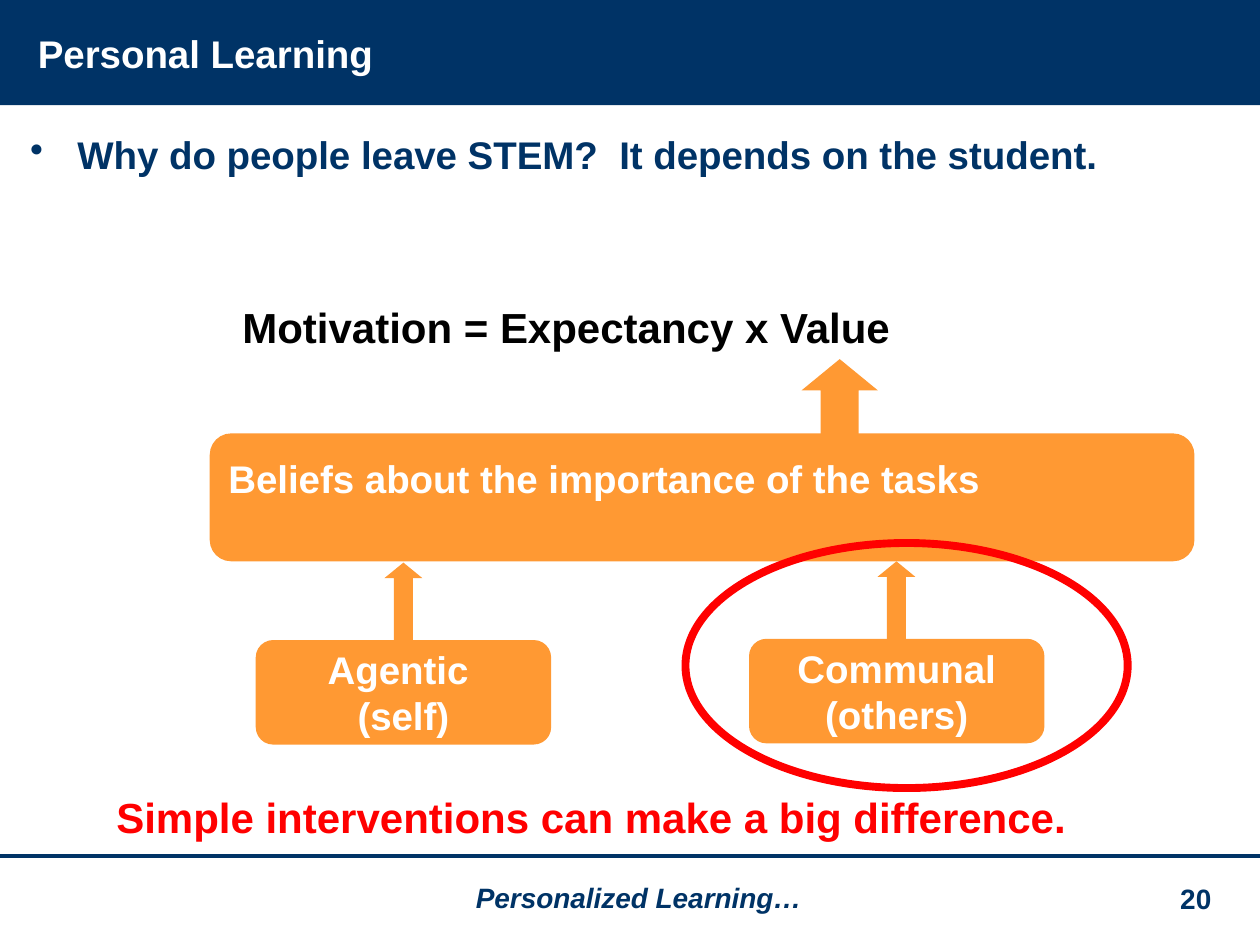
import pptx
import pptx.dml.color
import pptx.enum.shapes
import pptx.enum.text
import pptx.util
from lxml import etree

Kind = pptx.enum.shapes.MSO_SHAPE
Align = pptx.enum.text.PP_ALIGN
Anchor = pptx.enum.text.MSO_ANCHOR

NAVY, ORANGE, RED, WHITE, BLACK = "003366", "FF9933", "FF0000", "FFFFFF", "000000"
DRAWING = "http://schemas.openxmlformats.org/drawingml/2006/main"

presentation = pptx.Presentation()
presentation.slide_width = pptx.util.Inches(10)
presentation.slide_height = pptx.util.Inches(7.5)
slide = presentation.slides.add_slide(presentation.slide_layouts[5])

# The slide is a grid of 100 columns by 75 rows of square cells.
CELL = presentation.slide_width / 100


def paint(color_format, color):
    color_format.rgb = pptx.dml.color.RGBColor.from_string(color)


def write(shape, lines, size, color, align=Align.LEFT, anchor=Anchor.TOP, italic=False, bullet=None):
    """Fill a shape with bold paragraphs, one for each line."""
    frame = shape.text_frame
    frame.word_wrap = True
    frame.vertical_anchor = anchor
    frame.text = "\n".join(lines)
    font_format = {"name": "Arial", "size": pptx.util.Pt(size), "bold": True, "italic": italic}
    for paragraph in frame.paragraphs:
        paragraph.alignment = align
        if bullet:
            properties = paragraph._p.get_or_add_pPr()
            properties.set("marL", str(round(3.75 * CELL)))
            properties.set("indent", str(round(-3.75 * CELL)))
            etree.SubElement(properties, f"{{{DRAWING}}}buChar", char=bullet)
        for name, value in font_format.items():
            setattr(paragraph.font, name, value)
        paint(paragraph.font.color, color)


# Preset shapes, from back to front: kind, (column, row, columns, rows), fill, lines of text
blocks = [
    (Kind.RECTANGLE, (0, 0, 100, 8.35), NAVY, None),
    (Kind.ROUNDED_RECTANGLE, (16.65, 34.4, 78.15, 10.15), ORANGE,
     ["Beliefs about the importance of the tasks"]),
    (Kind.UP_ARROW, (63.62, 28.5, 6.05, 8.2), ORANGE, None),
    (Kind.UP_ARROW, (30.52, 44.65, 3, 8.2), ORANGE, None),
    (Kind.ROUNDED_RECTANGLE, (20.3, 50.8, 23.45, 8.3), ORANGE, ["Agentic ", "(self)"]),
    (Kind.UP_ARROW, (69.65, 44.55, 3, 8.2), ORANGE, None),
    (Kind.ROUNDED_RECTANGLE, (59.45, 50.7, 23.45, 8.3), ORANGE, ["Communal", "(others)"]),
    (Kind.OVAL, (54.4, 43.1, 35.1, 19.45), None, None),
]
for kind, place, fill, lines in blocks:
    shape = slide.shapes.add_shape(kind, *(round(cells * CELL) for cells in place))
    shape.shadow.inherit = False
    if fill:
        shape.fill.solid()
        paint(shape.fill.fore_color, fill)
        shape.line.fill.background()
    else:
        shape.fill.background()
        paint(shape.line.color, RED)
        shape.line.width = pptx.util.Pt(4.5)
    if kind == Kind.UP_ARROW:
        shape.adjustments[0] = 0.5
        shape.adjustments[1] = 0.41
    if lines:
        single = len(lines) == 1
        write(shape, lines, 22, WHITE, Align.LEFT if single else Align.CENTER, Anchor.MIDDLE)
        if single:
            shape.text_frame.margin_bottom = round(3.5 * CELL)

footer_line = slide.shapes.add_connector(
    pptx.enum.shapes.MSO_CONNECTOR.STRAIGHT,
    0, round(67.95 * CELL), presentation.slide_width, round(67.95 * CELL),
)
paint(footer_line.line.color, NAVY)
footer_line.line.width = pptx.util.Pt(2)
etree.SubElement(footer_line._element.spPr, f"{{{DRAWING}}}effectLst")

title = slide.shapes.title
title_place = {"left": 2, "top": 2.1, "width": 60.1, "height": 4.2}
for name, cells in title_place.items():
    setattr(title, name, round(cells * CELL))
title.fill.solid()
paint(title.fill.fore_color, NAVY)
write(title, ["Personal Learning"], 22, WHITE, anchor=Anchor.MIDDLE)
slide.shapes._spTree.append(title._element)  # in front of the header band

# Text: wording, (column, row, columns, rows), size, colour, alignment, italic, bullet
labels = [
    ("Why do people leave STEM?  It depends on the student.",
     (1.4, 9.9, 97.2, 56.5), 22, NAVY, Align.LEFT, False, "•"),
    ("Motivation = Expectancy x Value", (18.25, 23.4, 72.3, 5), 24, BLACK, Align.LEFT, False, None),
    ("Simple interventions can make a big difference.",
     (8.25, 62.3, 84.4, 5), 24, RED, Align.LEFT, False, None),
    ("Personalized Learning…", (24, 69.4, 53.4, 3.7), 16, NAVY, Align.CENTER, True, None),
    ("20", (91.35, 69.5, 7.1, 3.7), 16, NAVY, Align.CENTER, False, None),
]
for text, place, size, color, align, italic, bullet in labels:
    label = slide.shapes.add_textbox(*(round(cells * CELL) for cells in place))
    write(label, [text], size, color, align, italic=italic, bullet=bullet)

presentation.save("out.pptx")
